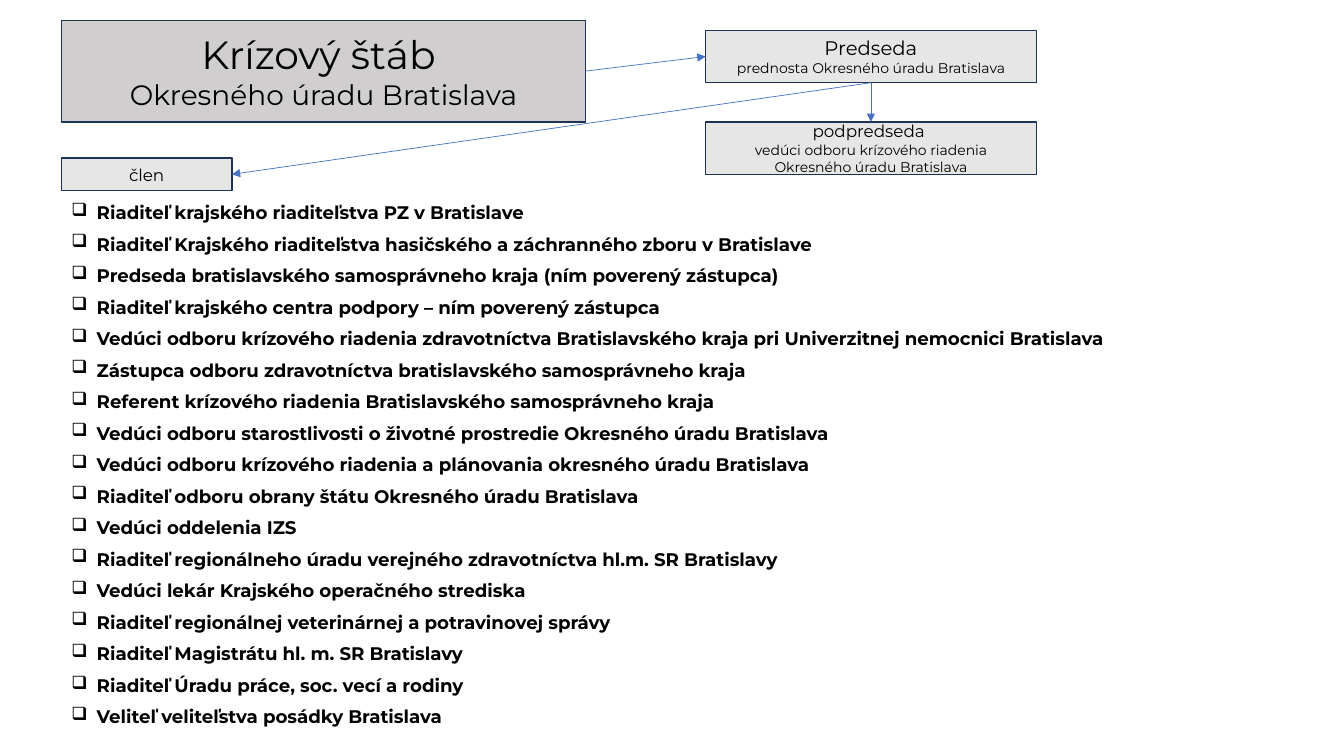
from dataclasses import dataclass

from lxml.etree import SubElement
from pptx import Presentation
from pptx.dml.color import RGBColor as Rgb
from pptx.enum.shapes import MSO_CONNECTOR as Connector, MSO_SHAPE as Preset
from pptx.enum.text import MSO_ANCHOR as Anchor, MSO_AUTO_SIZE as AutoSize, PP_ALIGN as Align
from pptx.oxml.ns import qn
from pptx.util import Inches, Pt


@dataclass(frozen=True)
class Theme:
    font: str = "Montserrat"
    text: Rgb = Rgb(0x00, 0x00, 0x00)
    heading_fill: Rgb = Rgb(0xD0, 0xCE, 0xCE)
    role_fill: Rgb = Rgb(0xE7, 0xE6, 0xE6)
    border: Rgb = Rgb(0x1E, 0x32, 0x56)
    arrow: Rgb = Rgb(0x44, 0x72, 0xC4)
    title: int = 28
    subtitle: int = 20
    chair: int = 14
    role: int = 12
    detail: int = 10
    member: int = 13


@dataclass(frozen=True)
class Box:
    left: float
    top: float
    width: float
    height: float

    def inner(self, x, y, w, h):
        """Return the inner box given in percent of this one."""
        return Box(self.left + self.width * x / 100, self.top + self.height * y / 100,
                   self.width * w / 100, self.height * h / 100)

    def emu(self):
        return tuple(round(v) for v in (self.left, self.top, self.width, self.height))


THEME = Theme()
BULLET = "❑"
BULLET_INDENT = Inches(0.25)
MEMBERS = [
    "Riaditeľ krajského riaditeľstva PZ v Bratislave",
    "Riaditeľ Krajského riaditeľstva hasičského a záchranného zboru v Bratislave",
    "Predseda bratislavského samosprávneho kraja (ním poverený zástupca)",
    "Riaditeľ krajského centra podpory – ním poverený zástupca",
    "Vedúci odboru krízového riadenia zdravotníctva Bratislavského kraja "
    "pri Univerzitnej nemocnici Bratislava",
    "Zástupca odboru zdravotníctva bratislavského samosprávneho kraja",
    "Referent krízového riadenia Bratislavského samosprávneho kraja",
    "Vedúci odboru starostlivosti o životné prostredie Okresného úradu Bratislava",
    "Vedúci odboru krízového riadenia a plánovania okresného úradu Bratislava",
    "Riaditeľ odboru obrany štátu Okresného úradu Bratislava",
    "Vedúci oddelenia IZS",
    "Riaditeľ regionálneho úradu verejného zdravotníctva hl.m. SR Bratislavy",
    "Vedúci lekár Krajského operačného strediska",
    "Riaditeľ regionálnej veterinárnej a potravinovej správy",
    "Riaditeľ Magistrátu hl. m. SR Bratislavy",
    "Riaditeľ Úradu práce, soc. vecí a rodiny",
    "Veliteľ veliteľstva posádky Bratislava",
]
TOP, LEFT, BOTTOM, RIGHT = range(4)  # connection sites of a rectangle


def write_lines(frame, lines, align, bold=False):
    """Fill the frame with (text, size) paragraphs."""
    frame.word_wrap = True
    frame.auto_size = AutoSize.NONE
    for i, (text, size) in enumerate(lines):
        line = frame.add_paragraph() if i else frame.paragraphs[0]
        line.text = text
        line.alignment = align
        font = line.font
        font.name, font.size, font.bold = THEME.font, Pt(size), bold
        font.color.rgb = THEME.text


def style_card(card, fill, lines):
    card.fill.solid()
    card.fill.fore_color.rgb = fill
    card.line.color.rgb = THEME.border
    card.line.width = Pt(1)
    card.text_frame.vertical_anchor = Anchor.MIDDLE
    write_lines(card.text_frame, lines, Align.CENTER)


def add_role(slide, box, lines):
    role = slide.shapes.add_shape(Preset.RECTANGLE, *box.emu())
    role.shadow.inherit = False
    style_card(role, THEME.role_fill, lines)
    return role


def add_arrow(slide, source, source_site, target, target_site):
    arrow = slide.shapes.add_connector(Connector.STRAIGHT, 0, 0, 0, 0)
    arrow.begin_connect(source, source_site)
    arrow.end_connect(target, target_site)
    arrow.line.color.rgb = THEME.arrow
    arrow.line.width = Pt(0.5)
    props = arrow._element.spPr
    SubElement(props.find(qn("a:ln")), qn("a:tailEnd"), type="triangle")
    SubElement(props, qn("a:effectLst"))


def place_heading(slide, box):
    heading = slide.shapes.title
    heading.left, heading.top, heading.width, heading.height = box.emu()
    style_card(heading, THEME.heading_fill, [
        ("Krízový štáb ", THEME.title),
        ("Okresného úradu Bratislava", THEME.subtitle),
    ])
    return heading


def add_leadership(slide, box):
    """Stack the chair and the deputy at the two ends of the box."""
    share = 36.4
    chair = add_role(slide, box.inner(0, 0, 100, share), [
        ("Predseda", THEME.chair),
        ("prednosta Okresného úradu Bratislava", THEME.detail),
    ])
    deputy = add_role(slide, box.inner(0, 100 - share, 100, share), [
        ("podpredseda ", THEME.role),
        ("vedúci odboru krízového riadenia Okresného úradu Bratislava", THEME.detail),
    ])
    add_arrow(slide, chair, BOTTOM, deputy, TOP)
    return chair


def add_members(slide, box):
    """Place the member label above the bulleted list and return the label."""
    label = add_role(slide, box.inner(0, 0, 14.32, 5.6), [("člen", THEME.role)])
    roster = slide.shapes.add_textbox(*box.inner(0, 7.34, 100, 92.66).emu()).text_frame
    write_lines(roster, [(member, THEME.member) for member in MEMBERS], Align.LEFT, bold=True)
    for line in roster.paragraphs:
        line.line_spacing = 0.8
        line.space_before = Pt(10)
        props = line._p.get_or_add_pPr()
        props.set("marL", str(BULLET_INDENT))
        props.set("indent", str(-BULLET_INDENT))
        bullet = props.makeelement(qn("a:buChar"), {"char": BULLET})
        props.find(qn("a:spcBef")).addnext(bullet)
    return label


def build_crisis_staff(deck):
    slide = deck.slides.add_slide(deck.slide_layouts[5])
    page = Box(0, 0, deck.slide_width, deck.slide_height)
    heading = place_heading(slide, page.inner(4.58, 2.67, 39, 13.47))
    chair = add_leadership(slide, page.inner(52.5, 4, 24.6, 19.07))
    member_label = add_members(slide, page.inner(4.58, 20.93, 88.5, 76.27))
    add_arrow(slide, heading, RIGHT, chair, LEFT)
    add_arrow(slide, chair, BOTTOM, member_label, RIGHT)


def main():
    deck = Presentation()
    deck.slide_width, deck.slide_height = Inches(13.33), Inches(7.5)
    build_crisis_staff(deck)
    deck.save("out.pptx")


if __name__ == "__main__":
    main()
